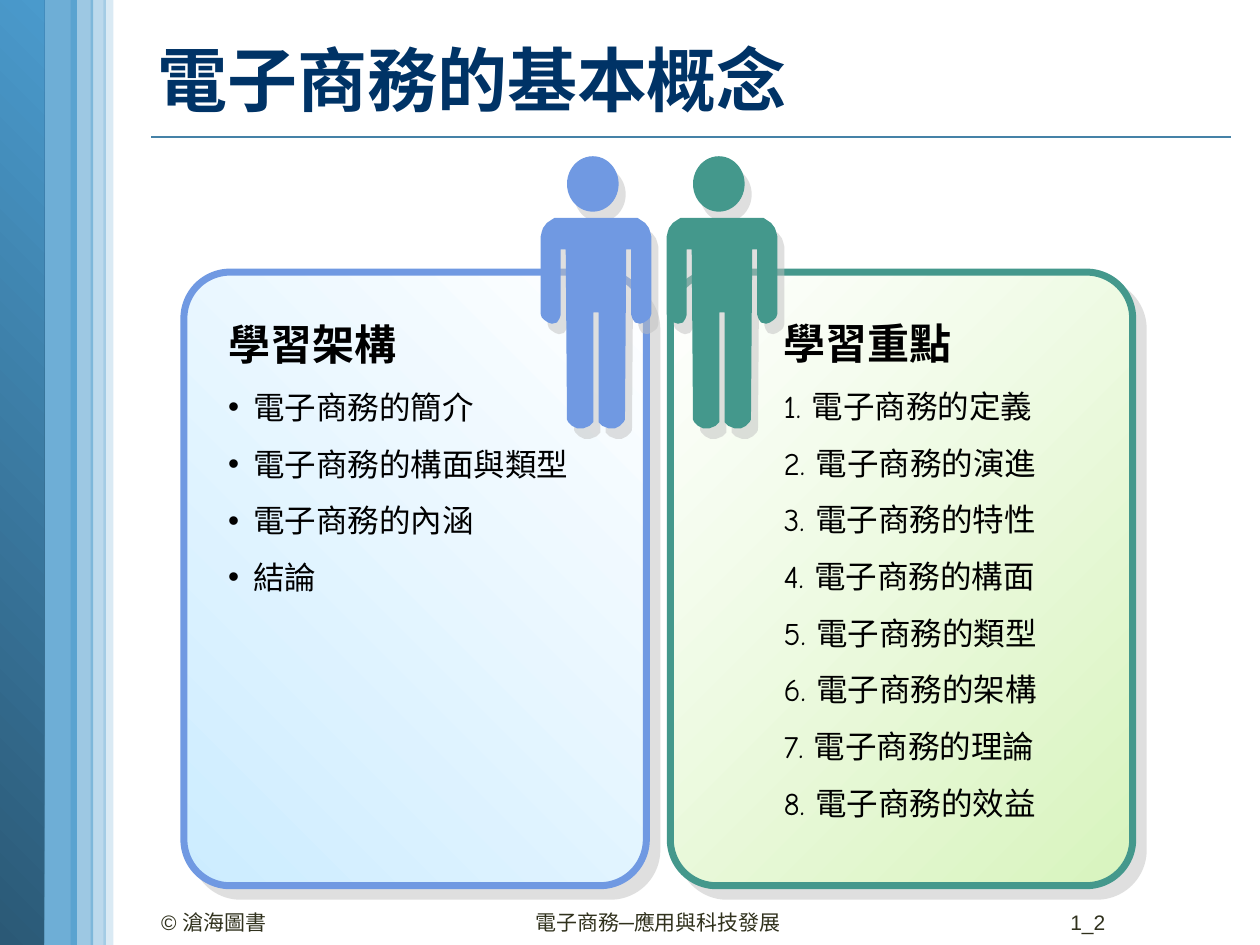
from lxml.etree import SubElement as Sub
from pptx import Presentation as Deck
from pptx.dml.color import RGBColor as Rgb
from pptx.enum.shapes import MSO_CONNECTOR as Conn, MSO_SHAPE as Kind
from pptx.enum.text import MSO_ANCHOR as Anchor, MSO_AUTO_SIZE as Fit, PP_ALIGN as Align
from pptx.oxml.ns import qn
from pptx.util import Pt

PX = 9144  # 100 px to the inch
HUES = {
    "navy": "003366", "rule": "4582A7", "sky": "4A9ACC", "deep": "2B5976",
    "blue": "7099E2", "ice": "CCECFF", "green": "44988C", "lime": "D8F4BE",
    "white": "FFFFFF", "black": "000000", "foot": "30311D", "shade": "C0C0C0",
}
FORMS = {
    "title": {"name": "Comic Neue", "size": Pt(40), "bold": True},
    "head": {"name": "Comic Neue", "size": Pt(24), "bold": True},
    "item": {"name": "Comic Neue", "size": Pt(18), "bold": False},
    "foot": {"name": "Arial", "size": Pt(12), "bold": False},
}
# Left half of the body: distance from the middle axis, then height
HALF = [
    (30, 173), (33, 173), (36, 175), (39, 177), (42, 181), (43, 184),
    (44, 188), (44, 249), (43, 252), (41, 254), (38, 256), (35, 257),
    (31, 256), (29, 253), (28, 250), (28, 198), (24, 198), (23, 333),
    (22, 335), (19, 338), (15, 340), (10, 340), (5, 338), (2, 335), (2, 248),
]


def hue(key):
    return Rgb.from_string(HUES[key])


class Page:
    def __init__(self, deck):
        self.slide = deck.slides.add_slide(deck.slide_layouts[3])
        self.shapes = self.slide.shapes

    def place(self, shape, box):
        for key, val in zip(("left", "top", "width", "height"), box):
            setattr(shape, key, val * PX)

    def paint(self, shape, color, alpha=100):
        shape.shadow.inherit = False
        shape.line.fill.background()
        shape.fill.solid()
        shape.fill.fore_color.rgb = hue(color)
        if alpha < 100:
            tint = shape.element.spPr.find(".//" + qn("a:srgbClr"))
            Sub(tint, qn("a:alpha"), val=str(alpha * 1000))

    def blend(self, shape, first, last, angle):
        shape.fill.gradient()
        shape.fill.gradient_angle = angle
        for stop, key in zip(shape.fill.gradient_stops, (first, last)):
            stop.color.rgb = hue(key)

    def shade(self, shape, dist, angle):
        effects = shape.element.spPr.find(qn("a:effectLst"))
        cast = Sub(effects, qn("a:outerShdw"), dist=str(Pt(dist)),
                   dir=str(angle * 60000), algn="ctr", rotWithShape="0")
        tint = Sub(cast, qn("a:srgbClr"), val=HUES["shade"])
        Sub(tint, qn("a:alpha"), val="50000")

    def block(self, box, color, alpha=100, kind=Kind.RECTANGLE):
        shape = self.shapes.add_shape(kind, *(val * PX for val in box))
        self.paint(shape, color, alpha)
        return shape

    def rule(self, x1, x2, y):
        line = self.shapes.add_connector(
            Conn.STRAIGHT, x1 * PX, y * PX, x2 * PX, y * PX)
        line.line.color.rgb = hue("rule")
        line.line.width = Pt(1)
        Sub(line.element.spPr, qn("a:effectLst"))

    def panel(self, left, edge, first, last, angle):
        shape = self.block((left, 216, 367, 487), first, kind=Kind.ROUNDED_RECTANGLE)
        shape.adjustments[0] = 0.1
        self.blend(shape, first, last, angle)
        shape.line.color.rgb = hue(edge)
        shape.line.width = Pt(4)
        self.shade(shape, 8.5, 45)

    def person(self, mid, color):
        head = self.block((mid - 23, 124, 41, 44), color, kind=Kind.OVAL)
        pts = [(mid - x, y) for x, y in HALF]
        pts += [(mid + x, y) for x, y in reversed(HALF)]
        pen = self.shapes.build_freeform(*pts[0], scale=PX)
        pen.add_line_segments(pts[1:], close=True)
        body = pen.convert_to_shape()
        self.paint(body, color)
        for part in (head, body):
            self.shade(part, 7.2, 56)

    def fill_in(self, para, text, form, color, align=Align.LEFT):
        para.alignment = align
        para.space_before = para.space_after = Pt(0)
        run = para.add_run()
        run.text = text
        run.font.color.rgb = hue(color)
        for key, val in FORMS[form].items():
            setattr(run.font, key, val)
        Sub(run._r.get_or_add_rPr(), qn("a:ea"), typeface=FORMS[form]["name"])

    def title(self, text, box):
        shape = self.shapes.title
        self.place(shape, box)
        shape.text_frame.vertical_anchor = Anchor.MIDDLE
        self.fill_in(shape.text_frame.paragraphs[0], text, "title", "navy")

    def items(self, slot, box, head, lines, hang, mark=None):
        shape = self.slide.placeholders[slot]
        shape.element.getparent().append(shape.element)  # above its panel
        self.place(shape, box)
        frame = shape.text_frame
        frame.auto_size = Fit.SHAPE_TO_FIT_TEXT
        frame.vertical_anchor = Anchor.TOP
        for row, text in enumerate([head, *lines]):
            para = frame.add_paragraph() if row else frame.paragraphs[0]
            props = para._p.get_or_add_pPr()
            dent = hang * PX if row else 0
            props.set("marL", str(dent))
            props.set("indent", str(-dent))
            if row and mark:
                Sub(props, qn("a:buChar"), char=mark)
            else:
                Sub(props, qn("a:buNone"))
            para.line_spacing = 1.5
            self.fill_in(para, text, "item" if row else "head", "black")

    def note(self, box, text, align=Align.LEFT):
        frame = self.shapes.add_textbox(*(val * PX for val in box)).text_frame
        frame.word_wrap = True
        self.fill_in(frame.paragraphs[0], text, "foot", "foot", align)


def main():
    deck = Deck()
    deck.slide_width, deck.slide_height = 1000 * PX, 750 * PX
    page = Page(deck)

    # Side bands and title
    page.rule(120, 977, 109)
    page.block((30, 0, 31, 750), "sky", 80)
    band = page.block((0, 0, 35, 750), "deep")
    page.blend(band, "deep", "sky", 45)
    for left, width, alpha in ((82, 8, 20), (56, 18, 54), (72, 12, 37)):
        page.block((left, 0, width, 750), "sky", alpha)
    page.title("電子商務的基本概念", (115, 7, 870, 111))

    # Left panel: outline of the chapter
    topic = "電子商務的"
    page.panel(146, "blue", "ice", "white", 45)
    page.person(473, "blue")
    parts = [topic + end for end in ("簡介", "構面與類型", "內涵")]
    page.items(1, (171, 228, 310, 252), "學習架構", parts + ["結論"], 20, "•")

    # Right panel: key points
    page.panel(532, "green", "white", "lime", 315)
    ends = ("定義", "演進", "特性", "構面", "類型", "架構", "理論", "效益")
    points = [f"{num}. {topic}{end}" for num, end in enumerate(ends, 1)]
    page.items(2, (612, 227, 283, 434), "學習重點", points, 38)
    page.person(573, "green")

    # Footer
    page.note((118, 717, 233, 26), "© 滄海圖書")
    page.note((815, 717, 72, 26), "1_2", Align.RIGHT)
    page.note((415, 717, 236, 26), "電子商務─應用與科技發展")

    deck.save("out.pptx")


if __name__ == "__main__":
    main()
